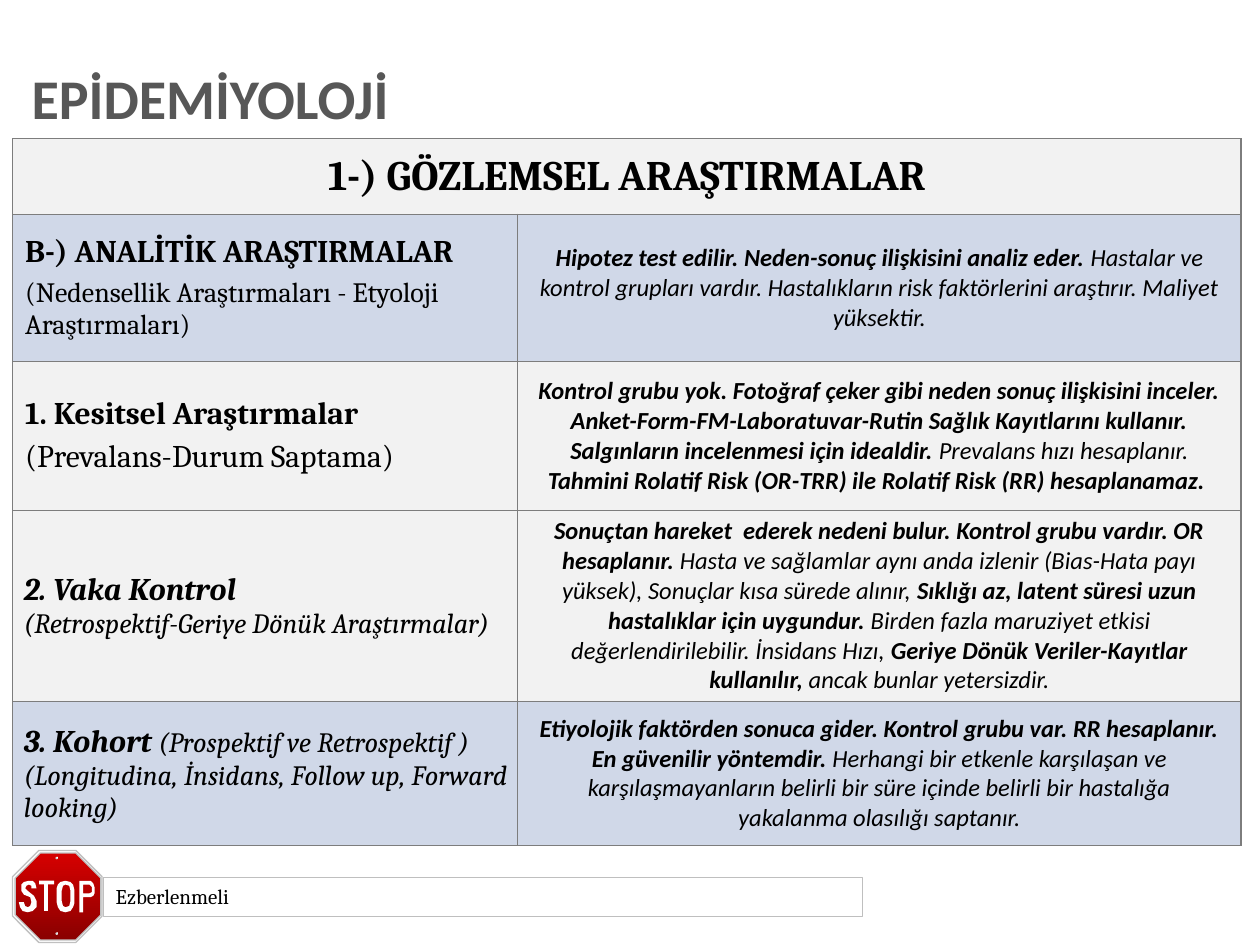
from dataclasses import dataclass

from lxml import etree
from pptx import Presentation
from pptx.dml.color import RGBColor
from pptx.enum import shapes, text
from pptx.oxml import ns
from pptx.util import Inches, Pt


@dataclass(frozen=True)
class Theme:
    heading: str = "Calibri"
    serif: str = "Cambria"
    black: str = "000000"
    white: str = "FFFFFF"
    grey: str = "575757"
    pale: str = "F2F2F2"
    blue: str = "D0D8E8"
    border: str = "7D7D7D"
    silver: str = "C0C0C0"
    footer_line: str = "BFBFBF"
    screw: str = "D2D2D2"
    red_top: str = "D60000"
    red_bottom: str = "8A0000"
    title_size: int = 32
    header_size: int = 24
    term_size: int = 18
    note_size: int = 16
    body_size: int = 14
    footer_size: int = 12


THEME = Theme()
CENTER = text.PP_ALIGN.CENTER


@dataclass(frozen=True)
class Span:
    text: str
    bold: bool = False
    size: int = THEME.note_size


@dataclass(frozen=True)
class Row:
    height: float
    fill: str
    term: tuple[tuple[Span, ...], ...]
    description: tuple[Span, ...]
    italic_term: bool = False


def term(value: str) -> Span:
    return Span(value, True, THEME.term_size)


def strong(value: str) -> Span:
    return Span(value, True, THEME.body_size)


def plain(value: str) -> Span:
    return Span(value, False, THEME.body_size)


ROWS = (
    Row(1.17, THEME.blue,
        ((term("B-) ANALİTİK ARAŞTIRMALAR"),),
         (Span("(Nedensellik Araştırmaları - Etyoloji Araştırmaları)"),)),
        (strong("Hipotez test edilir. Neden-sonuç ilişkisini analiz eder. "),
         plain("Hastalar ve kontrol grupları vardır. Hastalıkların risk faktörlerini "
               "araştırır. Maliyet yüksektir."))),
    Row(1.18, THEME.pale,
        ((term("1. Kesitsel Araştırmalar"),),
         (Span("(Prevalans-Durum Saptama)", size=THEME.term_size),)),
        (strong("Kontrol grubu yok. Fotoğraf çeker gibi neden sonuç ilişkisini inceler. "
                "Anket-Form-FM-Laboratuvar-Rutin Sağlık Kayıtlarını kullanır. "
                "Salgınların incelenmesi için idealdir. "),
         plain("Prevalans hızı hesaplanır. "),
         strong("Tahmini Rolatif Risk (OR-TRR) ile Rolatif Risk (RR) hesaplanamaz. "))),
    Row(1.52, THEME.pale,
        ((term("2. Vaka Kontrol \n"), Span("(Retrospektif-Geriye Dönük Araştırmalar)")),),
        (strong("Sonuçtan hareket  ederek nedeni bulur. Kontrol grubu vardır. OR hesaplanır. "),
         plain("Hasta ve sağlamlar aynı anda izlenir (Bias-Hata payı yüksek), "
               "Sonuçlar kısa sürede alınır, "),
         strong("Sıklığı az, latent süresi uzun hastalıklar için uygundur."),
         plain(" Birden fazla maruziyet etkisi değerlendirilebilir. İnsidans Hızı,"),
         strong(" Geriye Dönük Veriler-Kayıtlar kullanılır, "),
         plain("ancak bunlar yetersizdir.")), True),
    Row(1.14, THEME.blue,
        ((term("3. Kohort "),
          Span("(Prospektif ve Retrospektif )\n"
               "(Longitudina, İnsidans, Follow up, Forward looking)")),),
        (strong("Etiyolojik faktörden sonuca gider. Kontrol grubu var. RR hesaplanır. "
                "En güvenilir yöntemdir. "),
         plain("Herhangi bir etkenle karşılaşan ve karşılaşmayanların belirli bir süre "
               "içinde belirli bir hastalığa yakalanma olasılığı saptanır.")), True),
)

LETTERS = (
    (((0.25, 7.05), (0.29, 7.05), (0.28, 7.01), (0.26, 6.99), (0.23, 6.99), (0.19, 7),
      (0.17, 7.02), (0.17, 7.07), (0.19, 7.1), (0.24, 7.12), (0.25, 7.16), (0.24, 7.19),
      (0.22, 7.2), (0.2, 7.19), (0.19, 7.16), (0.15, 7.16), (0.16, 7.2), (0.18, 7.23),
      (0.22, 7.24), (0.26, 7.23), (0.29, 7.2), (0.29, 7.15), (0.27, 7.11), (0.22, 7.07),
      (0.2, 7.05), (0.21, 7.03), (0.23, 7.02), (0.25, 7.03)),),
    (((0.35, 7.23), (0.35, 7.02), (0.31, 7.02), (0.31, 6.99), (0.43, 6.99),
      (0.43, 7.02), (0.38, 7.02), (0.38, 7.23)),),
    (((0.52, 6.99), (0.48, 7), (0.46, 7.02), (0.45, 7.05), (0.45, 7.16), (0.46, 7.2),
      (0.48, 7.23), (0.52, 7.24), (0.56, 7.23), (0.58, 7.2), (0.59, 7.17), (0.59, 7.06),
      (0.58, 7.02), (0.56, 7)),
     ((0.56, 7.15), (0.55, 7.19), (0.52, 7.2), (0.5, 7.19), (0.49, 7.15), (0.49, 7.07),
      (0.5, 7.03), (0.52, 7.02), (0.55, 7.03), (0.56, 7.07))),
    (((0.74, 7.01), (0.72, 6.99), (0.63, 6.99), (0.63, 7.24), (0.66, 7.24), (0.66, 7.12),
      (0.72, 7.12), (0.74, 7.11), (0.75, 7.09), (0.75, 7.04)),
     ((0.71, 7.09), (0.66, 7.09), (0.66, 7.02), (0.71, 7.02), (0.73, 7.04), (0.73, 7.08))),
)


def add_text(paragraph, value: str, *, size: int, font: str = THEME.serif,
             color: str = THEME.black, bold: bool = False, italic: bool = False) -> None:
    for index, line in enumerate(value.split("\n")):
        if index:
            paragraph.add_line_break()
        if line:
            run = paragraph.add_run()
            run.text = line
            run.font.size, run.font.name = Pt(size), font
            run.font.bold, run.font.italic = bold, italic
            run.font.color.rgb = RGBColor.from_string(color)


def set_margins(target, left: float, top: float, right: float, bottom: float) -> None:
    target.margin_left, target.margin_top = Inches(left), Inches(top)
    target.margin_right, target.margin_bottom = Inches(right), Inches(bottom)


def format_cell(cell, fill: str) -> None:
    cell.vertical_anchor = text.MSO_ANCHOR.MIDDLE
    properties = cell._tc.get_or_add_tcPr()
    for side in ("lnL", "lnR", "lnT", "lnB"):
        line = etree.SubElement(properties, ns.qn(f"a:{side}"), w=str(Pt(0.75)))
        solid = etree.SubElement(line, ns.qn("a:solidFill"))
        etree.SubElement(solid, ns.qn("a:srgbClr"), val=THEME.border)
    cell.fill.solid()
    cell.fill.fore_color.rgb = RGBColor.from_string(fill)


def add_spans(paragraph, spans: tuple[Span, ...], font: str, italic: bool) -> None:
    for span in spans:
        add_text(paragraph, span.text, size=span.size, font=font,
                 bold=span.bold, italic=italic)


def add_research_table(slide) -> None:
    frame = slide.shapes.add_table(len(ROWS) + 1, 2, Inches(0.1), Inches(1.1),
                                   Inches(9.75), Inches(5.61))
    table = frame.table
    table.first_row = table.horz_banding = False
    for column, width in zip(table.columns, (4.01, 5.74)):
        column.width = Inches(width)
    for table_row, height in zip(table.rows, (0.6, *(row.height for row in ROWS))):
        table_row.height = Inches(height)
    header = table.cell(0, 0)
    header.merge(table.cell(0, 1))
    for column in range(2):
        format_cell(table.cell(0, column), THEME.pale)
    paragraph = header.text_frame.paragraphs[0]
    paragraph.alignment = CENTER
    add_text(paragraph, "1-) GÖZLEMSEL ARAŞTIRMALAR", size=THEME.header_size, bold=True)
    for index, row in enumerate(ROWS, 1):
        left, right = table.cell(index, 0), table.cell(index, 1)
        format_cell(left, row.fill)
        format_cell(right, row.fill)
        if row.italic_term:
            set_margins(left, 0.09, 0.01, 0.01, 0)
        for position, spans in enumerate(row.term):
            frame = left.text_frame
            paragraph = frame.add_paragraph() if position else frame.paragraphs[0]
            if position:
                paragraph.space_before = Pt(4)
            add_spans(paragraph, spans, THEME.serif, row.italic_term)
        paragraph = right.text_frame.paragraphs[0]
        paragraph.alignment = CENTER
        add_spans(paragraph, row.description, THEME.heading, True)


def paint(shape, fill: str | None, line: str | None = None, width: float = 0.75) -> None:
    shape.shadow.inherit = False
    if fill:
        shape.fill.solid()
        shape.fill.fore_color.rgb = RGBColor.from_string(fill)
    else:
        shape.fill.background()
    if line:
        shape.line.color.rgb = RGBColor.from_string(line)
        shape.line.width = Pt(width)
    else:
        shape.line.fill.background()


def add_preset(slide, kind, box: tuple[float, ...], fill: str | None,
               line: str | None = None, width: float = 0.75):
    shape = slide.shapes.add_shape(kind, *map(Inches, box))
    paint(shape, fill, line, width)
    return shape


def add_letter(slide, contours) -> None:
    outlines = [[(Inches(x), Inches(y)) for x, y in contour] for contour in contours]
    builder = slide.shapes.build_freeform(*outlines[0][0])
    for index, points in enumerate(outlines):
        if index:
            builder.move_to(*points[0])
        builder.add_line_segments(points[1:], close=True)
    paint(builder.convert_to_shape(), THEME.white)


def add_stop_sign(slide) -> None:
    octagon = shapes.MSO_SHAPE.OCTAGON
    add_preset(slide, octagon, (0.1, 6.75, 0.71, 0.73), THEME.white, THEME.silver)
    face = add_preset(slide, octagon, (0.12, 6.77, 0.68, 0.69), THEME.red_top, THEME.silver)
    face.fill.gradient()
    face.fill.gradient_angle = 270
    for stop, color in zip(face.fill.gradient_stops, (THEME.red_top, THEME.red_bottom)):
        stop.color.rgb = RGBColor.from_string(color)
    for contours in LETTERS:
        add_letter(slide, contours)
    for top in (7.4, 6.8):
        add_preset(slide, shapes.MSO_SHAPE.OVAL, (0.44, top, 0.02, 0.02), THEME.screw)
        add_preset(slide, shapes.MSO_SHAPE.OVAL, (0.45, top, 0.01, 0.01), THEME.white)


def main() -> None:
    presentation = Presentation()
    presentation.slide_width, presentation.slide_height = Inches(10), Inches(7.5)
    slide = presentation.slides.add_slide(presentation.slide_layouts[5])
    title = slide.shapes.title
    title.left, title.top, title.width, title.height = map(Inches, (0.25, 0.45, 9.64, 0.71))
    set_margins(title.text_frame, 0, 0.05, 0, 0.05)
    title.text_frame.auto_size = text.MSO_AUTO_SIZE.NONE
    title.text_frame.vertical_anchor = text.MSO_ANCHOR.MIDDLE
    paragraph = title.text_frame.paragraphs[0]
    paragraph.alignment, paragraph.line_spacing = text.PP_ALIGN.LEFT, 0.9
    add_text(paragraph, "EPİDEMİYOLOJİ", size=THEME.title_size, font=THEME.heading,
             color=THEME.grey, bold=True)
    add_research_table(slide)
    add_stop_sign(slide)
    footer = add_preset(slide, shapes.MSO_SHAPE.RECTANGLE, (0.82, 6.96, 6.02, 0.31),
                        None, THEME.footer_line, 0.25)
    footer.text_frame.vertical_anchor = text.MSO_ANCHOR.MIDDLE
    paragraph = footer.text_frame.paragraphs[0]
    paragraph.alignment = text.PP_ALIGN.LEFT
    add_text(paragraph, "Ezberlenmeli", size=THEME.footer_size)
    presentation.save("out.pptx")


if __name__ == "__main__":
    main()
